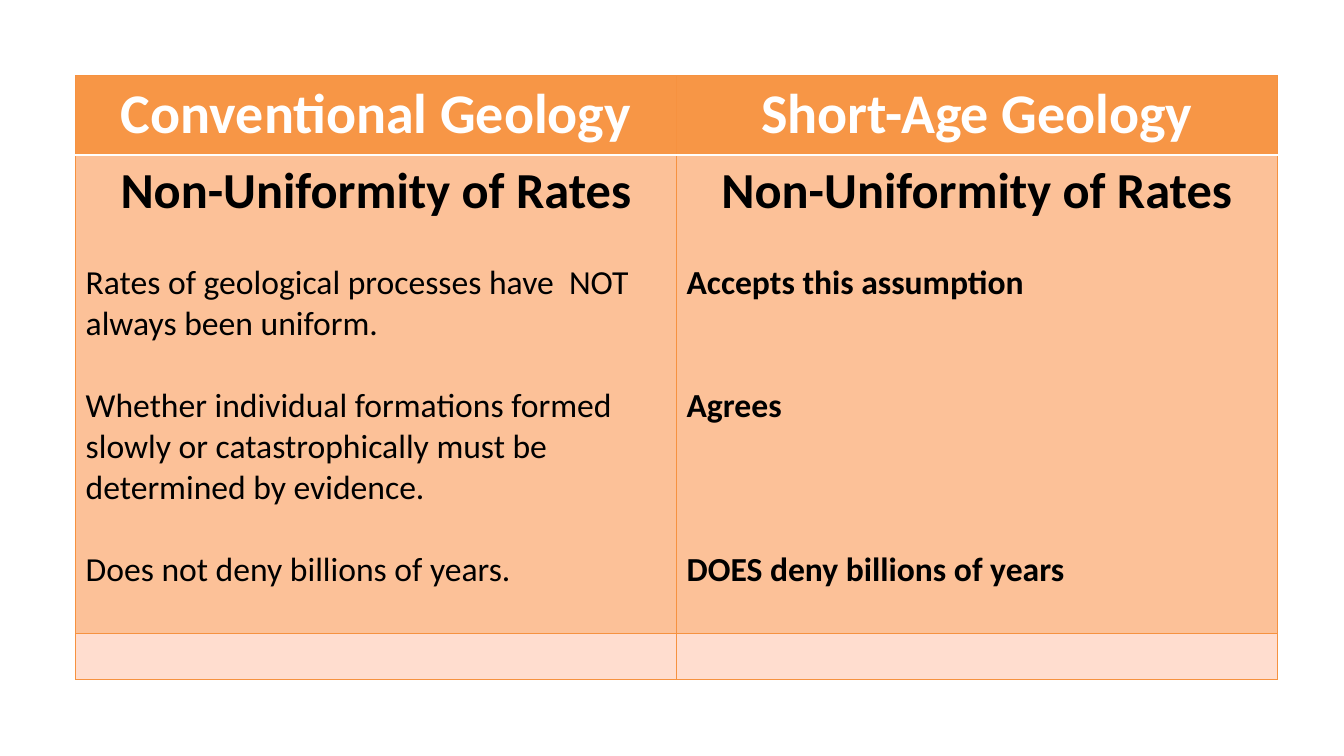
from lxml import etree
from pptx import Presentation
from pptx.dml.color import RGBColor
from pptx.enum import text
from pptx.oxml import ns
from pptx.util import Inches, Pt

COLORS = {
    "header": "F79646",
    "body": "FCC198",
    "footer": "FFDDCF",
    "grid": "F69240",
    "white": "FFFFFF",
    "black": "000000",
}
BLANK_LINE = 29.3  # height in points of one empty 24 pt line

HEADINGS = ["Conventional Geology", "Short-Age Geology"]
TOPIC = "Non-Uniformity of Rates"
# Each statement follows the number of empty lines above it.
CONVENTIONAL = [
    (1, "Rates of geological processes have  NOT always been uniform."),
    (1, "Whether individual formations formed slowly or catastrophically "
        "must be determined by evidence."),
    (1, "Does not deny billions of years."),
]
SHORT_AGE = [
    (1, "Accepts this assumption"),
    (2, "Agrees"),
    (3, "DOES deny billions of years"),
]


class ComparisonSlide:
    def __init__(self, slide, font="Calibri"):
        self.slide = slide
        self.font = font

    def table(self, left, top, widths, heights):
        frame = self.slide.shapes.add_table(
            len(heights), len(widths), Inches(left), Inches(top),
            Inches(sum(widths)), Inches(sum(heights)))
        grid = frame.table
        grid.horz_banding = False
        for column, width in zip(grid.columns, widths):
            column.width = Inches(width)
        for row, height in zip(grid.rows, heights):
            row.height = Inches(height)
        return grid

    def cell(self, cell, fill, top=("grid", 0.75), bottom=("grid", 0.75)):
        """Give the cell its borders, then its fill, as the schema orders them."""
        side = ("grid", 0.75)
        borders = {"lnL": side, "lnR": side, "lnT": top, "lnB": bottom}
        properties = cell._tc.get_or_add_tcPr()
        for tag, (color, width) in borders.items():
            line = etree.SubElement(properties, ns.qn(f"a:{tag}"), w=str(Pt(width)))
            solid = etree.SubElement(line, ns.qn("a:solidFill"))
            etree.SubElement(solid, ns.qn("a:srgbClr"), val=COLORS[color])
        cell.fill.solid()
        cell.fill.fore_color.rgb = RGBColor.from_string(COLORS[fill])

    def paragraph(self, paragraph, words, size, color="black", bold=True,
                  centered=False, lines_above=0):
        paragraph.alignment = text.PP_ALIGN.CENTER if centered else text.PP_ALIGN.LEFT
        paragraph.space_before = Pt(lines_above * BLANK_LINE)
        run = paragraph.add_run()
        run.text = words
        style = {"name": self.font, "size": Pt(size), "bold": bold}
        for attribute, value in style.items():
            setattr(run.font, attribute, value)
        run.font.color.rgb = RGBColor.from_string(COLORS[color])


def main():
    deck = Presentation()
    deck.slide_width, deck.slide_height = Inches(13.33), Inches(7.5)
    page = ComparisonSlide(deck.slides.add_slide(deck.slide_layouts[6]))

    comparison = page.table(0.75, 0.75, [5.96, 5.96], [0.79, 4.74, 0.46])
    rule = ("white", 2)
    views = [(CONVENTIONAL, False), (SHORT_AGE, True)]
    for column, (heading, (statements, bold)) in enumerate(zip(HEADINGS, views)):
        header, body, footer = (comparison.cell(row, column) for row in range(3))
        page.cell(header, "header", bottom=rule)
        page.cell(body, "body", top=rule)
        page.cell(footer, "footer")

        page.paragraph(header.text_frame.paragraphs[0], heading, 40, "white", centered=True)
        page.paragraph(body.text_frame.paragraphs[0], TOPIC, 36, centered=True)
        for lines_above, statement in statements:
            page.paragraph(body.text_frame.add_paragraph(), statement, 24,
                           bold=bold, lines_above=lines_above)

    deck.save("out.pptx")


if __name__ == "__main__":
    main()
